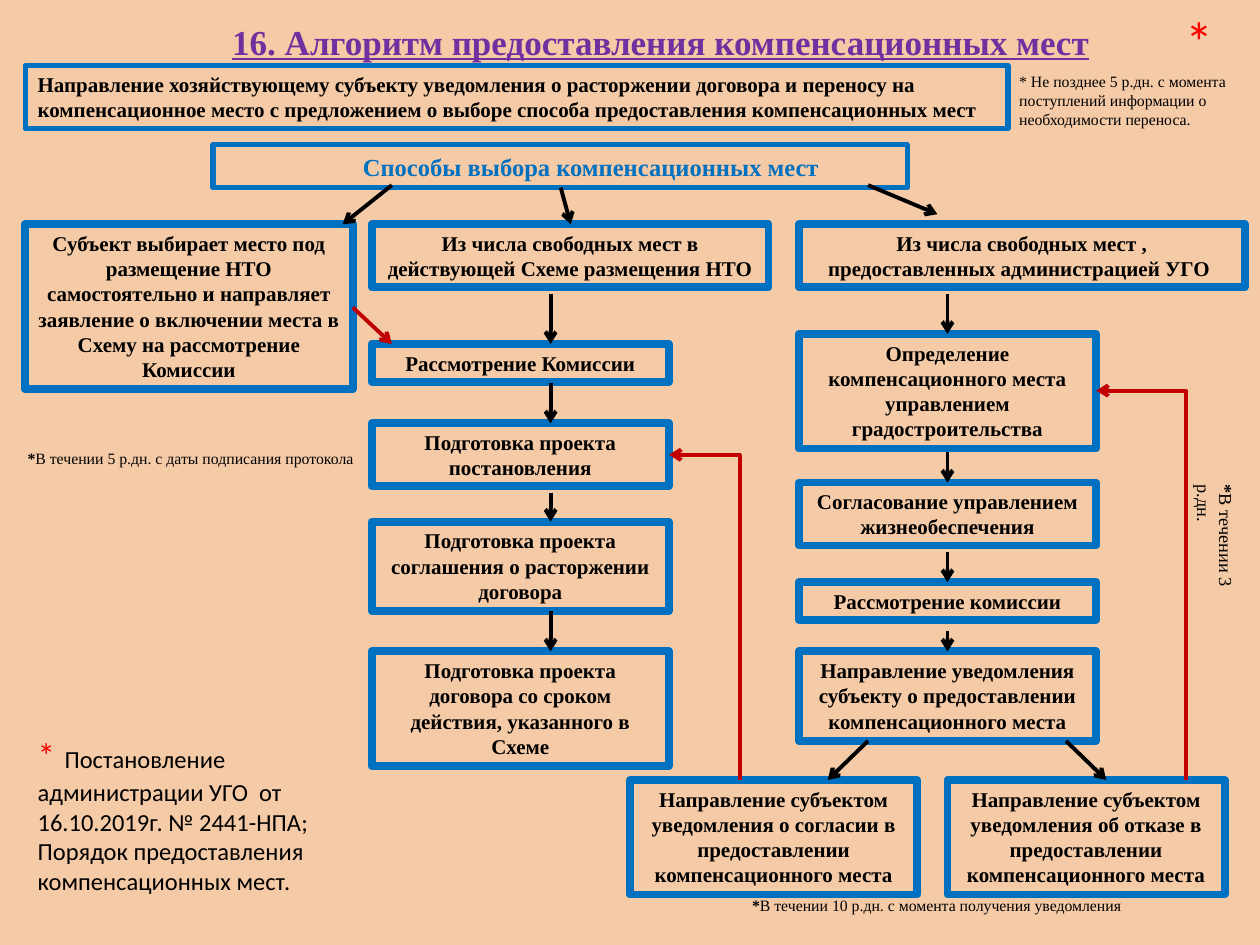
"""Build a flowchart slide on how compensation places are provided."""
from pptx import Presentation
from pptx.dml.color import RGBColor
from pptx.enum.shapes import MSO_CONNECTOR, MSO_SHAPE
from pptx.enum.text import MSO_ANCHOR, MSO_AUTO_SIZE, PP_ALIGN
from pptx.oxml.ns import qn
from pptx.util import Inches, Pt
from lxml.etree import SubElement

PEACH = RGBColor(0xF5, 0xCA, 0xA7)
BLUE = RGBColor(0x00, 0x70, 0xC0)
PURPLE = RGBColor(0x70, 0x30, 0xA0)
DARK_RED = RGBColor(0xC0, 0x00, 0x00)
RED = RGBColor(0xFF, 0x00, 0x00)
BLACK = RGBColor(0x00, 0x00, 0x00)
SERIF = "Times New Roman"


def add_text(sp, text, size=12, font=SERIF, color=BLACK, bold=False,
             underline=None, align=PP_ALIGN.LEFT, anchor=MSO_ANCHOR.TOP, indent=0):
    tf = sp.text_frame
    tf.word_wrap = True
    tf.auto_size = MSO_AUTO_SIZE.SHAPE_TO_FIT_TEXT
    tf.vertical_anchor = anchor
    p = tf.paragraphs[0]
    p.alignment = align
    if indent:
        p._p.get_or_add_pPr().set("indent", str(Inches(indent)))
    r = p.add_run()
    r.text = text
    r.font.size = Pt(size)
    r.font.name = font
    r.font.bold = bold
    r.font.underline = underline
    r.font.color.rgb = color


def add_arrow(x1, y1, x2, y2, color=BLACK, kind=MSO_CONNECTOR.STRAIGHT):
    cxn = s.shapes.add_connector(kind, Inches(x1), Inches(y1), Inches(x2), Inches(y2))
    cxn.line.color.rgb = color
    cxn.line.width = Pt(2.25)
    SubElement(cxn.line._get_or_add_ln(), qn("a:tailEnd"), type="arrow")
    SubElement(cxn._element.spPr, qn("a:effectLst"))
    return cxn


prs = Presentation()
prs.slide_width, prs.slide_height = Inches(10), Inches(7.5)
s = prs.slides.add_slide(prs.slide_layouts[6])
s.background.fill.solid()
s.background.fill.fore_color.rgb = PEACH

centered = dict(align=PP_ALIGN.CENTER, bold=True)
heading = dict(centered, anchor=MSO_ANCHOR.MIDDLE, indent=0.49)
MID, RIGHT, STEP_W = 2.95, 6.34, 2.36

boxes = [
    (0.2, 0.52, 7.8, 0.5, 3, "Направление хозяйствующему субъекту уведомления о расторжении договора и переносу на компенсационное место с предложением о выборе способа предоставления компенсационных мест", dict(bold=True)),
    (1.69, 1.15, 5.51, 0.34, 3, "Способы выбора компенсационных мест", dict(heading, size=14, color=BLUE)),
    (0.2, 1.78, 2.6, 1.31, 4.5, "Субъект выбирает место под размещение НТО самостоятельно и направляет заявление о включении места в Схему на рассмотрение Комиссии", centered),
    (MID, 1.78, 3.15, 0.5, 4.5, "Из числа свободных мест в действующей Схеме размещения НТО", centered),
    (RIGHT, 1.78, 3.54, 0.5, 4.5, "Из числа свободных мест , предоставленных администрацией УГО ", centered),
    (5, 6.19, 2.28, 0.91, 4.5, "Направление субъектом уведомления о согласии в предоставлении компенсационного места", centered),
    (7.52, 6.19, 2.2, 0.91, 4.5, "Направление субъектом уведомления об отказе в предоставлении компенсационного места", centered),
]
steps = [
    (MID, 2.73, 0.3, "Рассмотрение Комиссии"),
    (MID, 3.36, 0.5, "Подготовка проекта постановления"),
    (MID, 4.14, 0.71, "Подготовка проекта соглашения о расторжении договора"),
    (MID, 5.17, 0.91, "Подготовка проекта договора со сроком действия, указанного в Схеме"),
    (RIGHT, 2.65, 0.91, "Определение компенсационного места управлением градостроительства"),
    (RIGHT, 3.83, 0.5, "Согласование управлением жизнеобеспечения"),
    (RIGHT, 4.62, 0.3, "Рассмотрение комиссии"),
    (RIGHT, 5.17, 0.71, "Направление уведомления субъекту о предоставлении компенсационного места"),
]
boxes += [(x, y, STEP_W, h, 4.5, text, centered) for x, y, h, text in steps]
for x, y, w, h, weight, text, fmt in boxes:
    sp = s.shapes.add_shape(MSO_SHAPE.RECTANGLE, Inches(x), Inches(y), Inches(w), Inches(h))
    sp.shadow.inherit = False
    sp.fill.background()
    sp.line.color.rgb = BLUE
    sp.line.width = Pt(weight)
    add_text(sp, text, **fmt)

small = dict(size=9)
star = dict(size=9, bold=True)
side = dict(size=10.5)
notes = [
    (0, 0.11, 10, 0.44, None, [("16. Алгоритм предоставления компенсационных мест", dict(heading, size=20, color=PURPLE, underline=True))]),
    (7.99, 0.52, 2.52, 0.56, None, [("* Не позднее 5 р.дн. с момента поступлений информации о необходимости переноса.", small)]),
    (0.12, 3.51, 2.91, 0.25, None, [("*", star), ("В течении 5 р.дн. с даты подписания протокола", small)]),
    (5.87, 7.06, 3.39, 0.25, None, [("*", star), ("В течении 10 р.дн. с момента получения уведомления", small)]),
    (9.49, 3.75, 0.38, 1.26, "vert", [("*", dict(side, bold=True)), ("В течении 3 р.дн", side), (".", dict(side, font="Calibri"))]),
    (8.94, 0, 0.79, 0.64, None, [("*", dict(size=32, font="Calibri", color=RED, align=PP_ALIGN.RIGHT))]),
    (0.2, 5.72, 2.52, 1.45, None, [
        ("*", dict(size=20, font="Calibri", color=RED)),
        (" ", dict(size=24, font="Calibri", color=RED)),
        ("Постановление администрации УГО  от 16.10.2019г. № 2441-НПА; Порядок предоставления компенсационных мест.", dict(size=14, font="Calibri")),
    ]),
]
for x, y, w, h, vert, runs in notes:
    sp = s.shapes.add_textbox(Inches(x), Inches(y), Inches(w), Inches(h))
    if vert:
        sp.text_frame._txBody.bodyPr.set("vert", vert)
    for text, fmt in runs:
        add_text(sp, text, **fmt)

for x, spans in [
    (4.37, [(2.33, 2.73), (3.04, 3.36), (3.91, 4.14), (4.85, 5.17)]),
    (7.52, [(2.33, 2.65), (3.59, 3.83), (4.38, 4.62), (5.01, 5.17)]),
]:
    for top, bottom in spans:
        add_arrow(x, top, x, bottom)

for ends in [(3.11, 1.47, 2.72, 1.78), (4.45, 1.49, 4.53, 1.78), (6.89, 1.47, 7.44, 1.7),
             (6.89, 5.88, 6.57, 6.19), (8.46, 5.88, 8.78, 6.19)]:
    add_arrow(*ends)
add_arrow(2.8, 2.44, 3.11, 2.73, DARK_RED)

for x1, y1, x2, y2 in [(9.41, 6.19, 8.7, 3.1), (5.87, 6.19, 5.31, 3.61)]:
    cx, cy = (x1 + x2) / 2, (y1 + y2) / 2
    dx, dy = (y1 - y2) / 2, (x1 - x2) / 2
    cxn = add_arrow(cx - dx, cy + dy, cx + dx, cy - dy, DARK_RED, MSO_CONNECTOR.ELBOW)
    spPr = cxn._element.spPr
    spPr.find(qn("a:xfrm")).set("rot", str(270 * 60000))
    spPr.find(qn("a:prstGeom")).set("prst", "bentConnector2")

prs.save("out.pptx")
